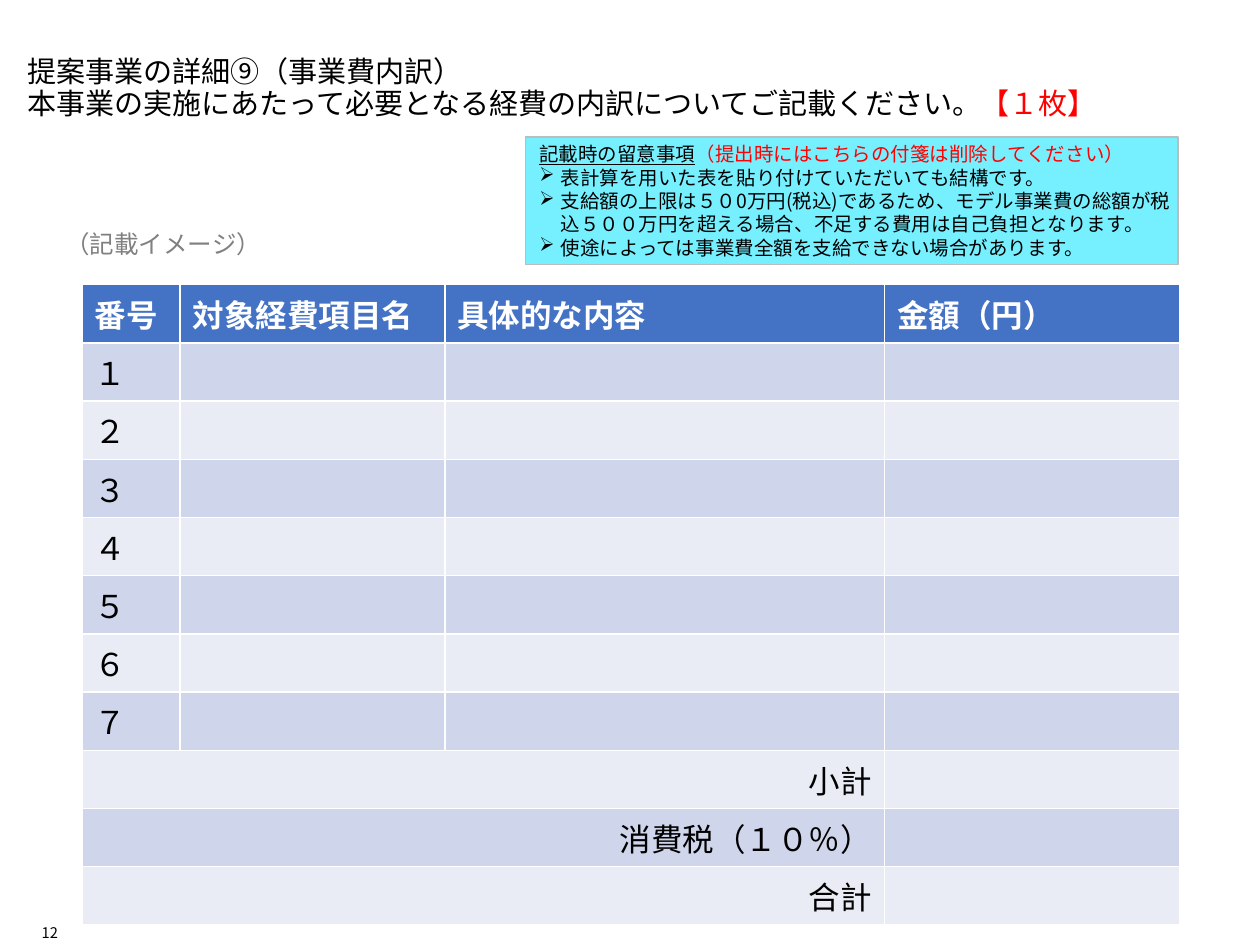
from dataclasses import dataclass

from lxml.etree import SubElement
from pptx import Presentation
from pptx.dml.color import RGBColor as Color
from pptx.enum.shapes import MSO_SHAPE as Shape
from pptx.enum.text import MSO_ANCHOR as Anchor, PP_ALIGN as Align
from pptx.oxml.ns import qn
from pptx.util import Inches, Pt


@dataclass(frozen=True)
class Theme:
    sans: str = "Noto Sans CJK JP"
    latin: str = "Calibri"
    symbols: str = "Wingdings"
    black: str = "000000"
    white: str = "FFFFFF"
    red: str = "FF0000"
    gray: str = "808080"
    header: str = "4472C4"
    bands: tuple = ("CFD5EA", "E9EBF5")
    note: str = "76F0FF"
    note_line: str = "BBBCBC"
    title_size: float = 16.6
    table_size: float = 18
    label_size: float = 14
    note_size: float = 11.1
    number_size: float = 8.4
    title_spacing: float = 0.9


THEME = Theme()


def add_run(paragraph, text, size, color=THEME.black, font=THEME.sans, **formats):
    run = paragraph.add_run()
    run.text = text
    for name, value in {"name": font, "size": Pt(size), **formats}.items():
        setattr(run.font, name, value)
    run.font.color.rgb = Color.from_string(color)
    if font == THEME.sans:
        SubElement(run.font._element, qn("a:ea"), typeface=font)


def set_frame(frame, insets, **formats):
    sides = ("margin_left", "margin_top", "margin_right", "margin_bottom")
    margins = {side: Inches(inset) for side, inset in zip(sides, insets)}
    for name, value in {**margins, **formats}.items():
        setattr(frame, name, value)


def add_text(slide, box, insets=(0, 0, 0, 0), **formats):
    frame = slide.shapes.add_textbox(*map(Inches, box)).text_frame
    set_frame(frame, insets, **{"word_wrap": True, **formats})
    return frame.paragraphs[0]


def add_title(slide, box):
    paragraph = add_text(slide, box)
    paragraph.line_spacing = THEME.title_spacing
    add_run(paragraph, "提案事業の詳細⑨（事業費内訳）", THEME.title_size)
    paragraph.add_line_break()
    add_run(paragraph, "本事業の実施にあたって必要となる経費の内訳についてご記載ください。", THEME.title_size)
    add_run(paragraph, "【１枚】", THEME.title_size, THEME.red)


def add_page_number(slide, box):
    paragraph = add_text(slide, box, vertical_anchor=Anchor.BOTTOM)
    paragraph.alignment = Align.RIGHT
    add_run(paragraph, "12", THEME.number_size)


def add_label(slide, box):
    paragraph = add_text(slide, box, (0.1, 0.05, 0.1, 0.05), word_wrap=False)
    add_run(paragraph, "（記載イメージ）", THEME.label_size, THEME.gray, THEME.latin)


def set_bullet(paragraph, character):
    properties = paragraph._p.get_or_add_pPr()
    indent = Inches(0.17)
    properties.set("marL", str(indent))
    properties.set("indent", str(-indent))
    color = SubElement(properties, qn("a:buClr"))
    SubElement(color, qn("a:srgbClr"), val=THEME.black)
    SubElement(properties, qn("a:buFont"), typeface=THEME.symbols, charset="2")
    SubElement(properties, qn("a:buChar"), char=character)


def add_note(slide, box):
    shape = slide.shapes.add_shape(Shape.RECTANGLE, *map(Inches, box))
    shape.shadow.inherit = False
    shape.fill.solid()
    shape.fill.fore_color.rgb = Color.from_string(THEME.note)
    shape.line.color.rgb = Color.from_string(THEME.note_line)
    shape.line.width = Pt(1)
    frame = shape.text_frame
    set_frame(frame, (0.11, 0.04, 0.04, 0.04), word_wrap=True, vertical_anchor=Anchor.TOP)
    heading = frame.paragraphs[0]
    add_run(heading, "記載時の留意事項", THEME.note_size, underline=True)
    add_run(heading, "（提出時にはこちらの付箋は削除してください）", THEME.note_size, THEME.red)
    points = (
        "表計算を用いた表を貼り付けていただいても結構です。",
        "支給額の上限は５０0万円(税込)であるため、モデル事業費の総額"
        "が税込５００万円を超える場合、不足する費用は自己負担となります。",
        "使途によっては事業費全額を支給できない場合があります。",
    )
    for point in points:
        add_run(frame.add_paragraph(), point, THEME.note_size)
    for paragraph in frame.paragraphs:
        paragraph.alignment = Align.LEFT
    for paragraph in frame.paragraphs[1:]:
        set_bullet(paragraph, "Ø")


def add_cost_table(slide, box):
    headings = ("番号", "対象経費項目名", "具体的な内容", "金額（円）")
    numbers = "１２３４５６７"
    totals = ("小計", "消費税（１０％）", "合計")
    rows = [headings, *((label,) for label in (*numbers, *totals))]
    table = slide.shapes.add_table(len(rows), len(headings), *map(Inches, box)).table
    for column, width in zip(table.columns, (0.78, 2.1, 3.49, 2.34)):
        column.width = Inches(width)
    for index, texts in enumerate(rows):
        is_header = index == 0
        is_total = index > len(numbers)
        fill = THEME.header if is_header else THEME.bands[(index - 1) % 2]
        for cell in table.rows[index].cells:
            cell.fill.solid()
            cell.fill.fore_color.rgb = Color.from_string(fill)
        if is_total:
            table.cell(index, 0).merge(table.cell(index, 2))
        for column, text in enumerate(texts):
            paragraph = table.cell(index, column).text_frame.paragraphs[0]
            paragraph.alignment = Align.RIGHT if is_total else Align.LEFT
            color = THEME.white if is_header else THEME.black
            add_run(paragraph, text, THEME.table_size, color, THEME.latin, bold=is_header)


def main():
    presentation = Presentation()
    presentation.slide_width = Inches(10)
    presentation.slide_height = Inches(7.5)
    slide = presentation.slides.add_slide(presentation.slide_layouts[6])
    add_title(slide, (0.22, 0.46, 9.56, 0.64))
    add_page_number(slide, (0.28, 7.29, 0.18, 0.18))
    add_cost_table(slide, (0.65, 2.26, 8.71, 5.08))
    add_note(slide, (4.17, 1.09, 5.18, 1.01))
    add_label(slide, (0.42, 1.77, 1.77, 0.34))
    presentation.save("out.pptx")


if __name__ == "__main__":
    main()
